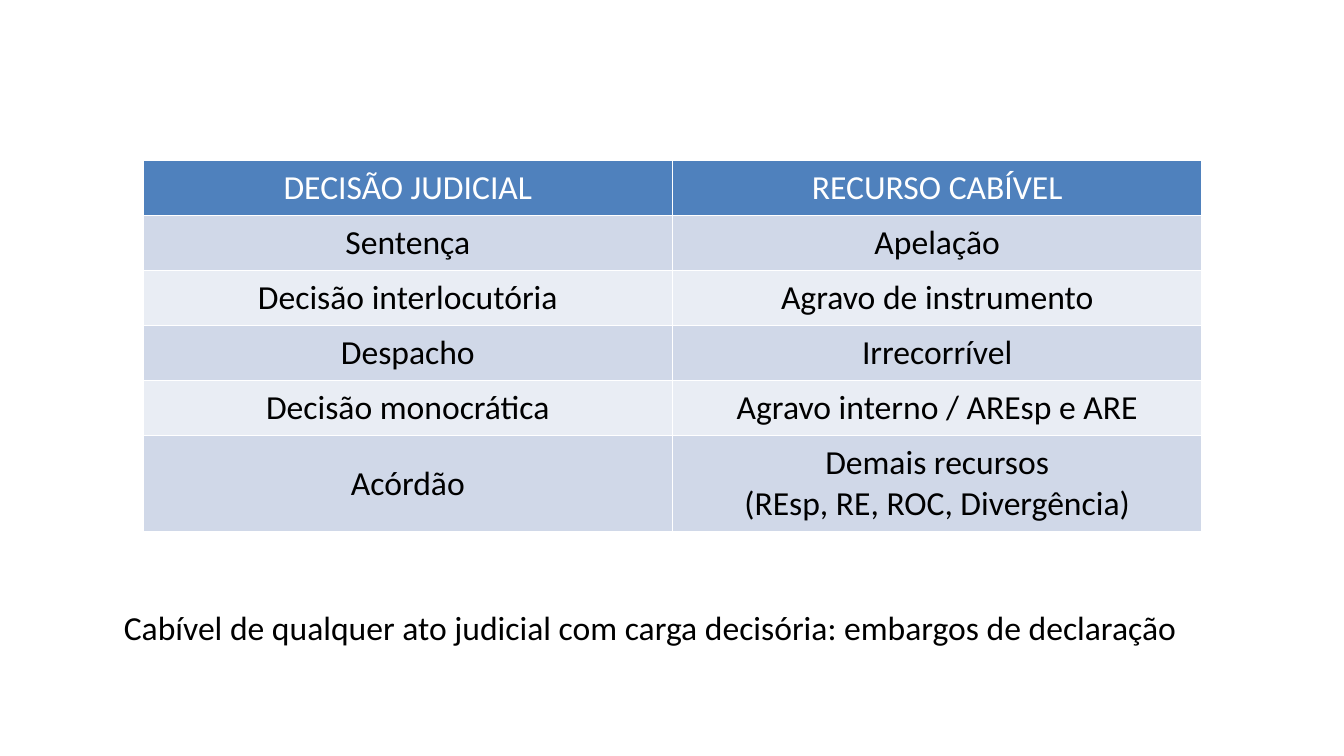
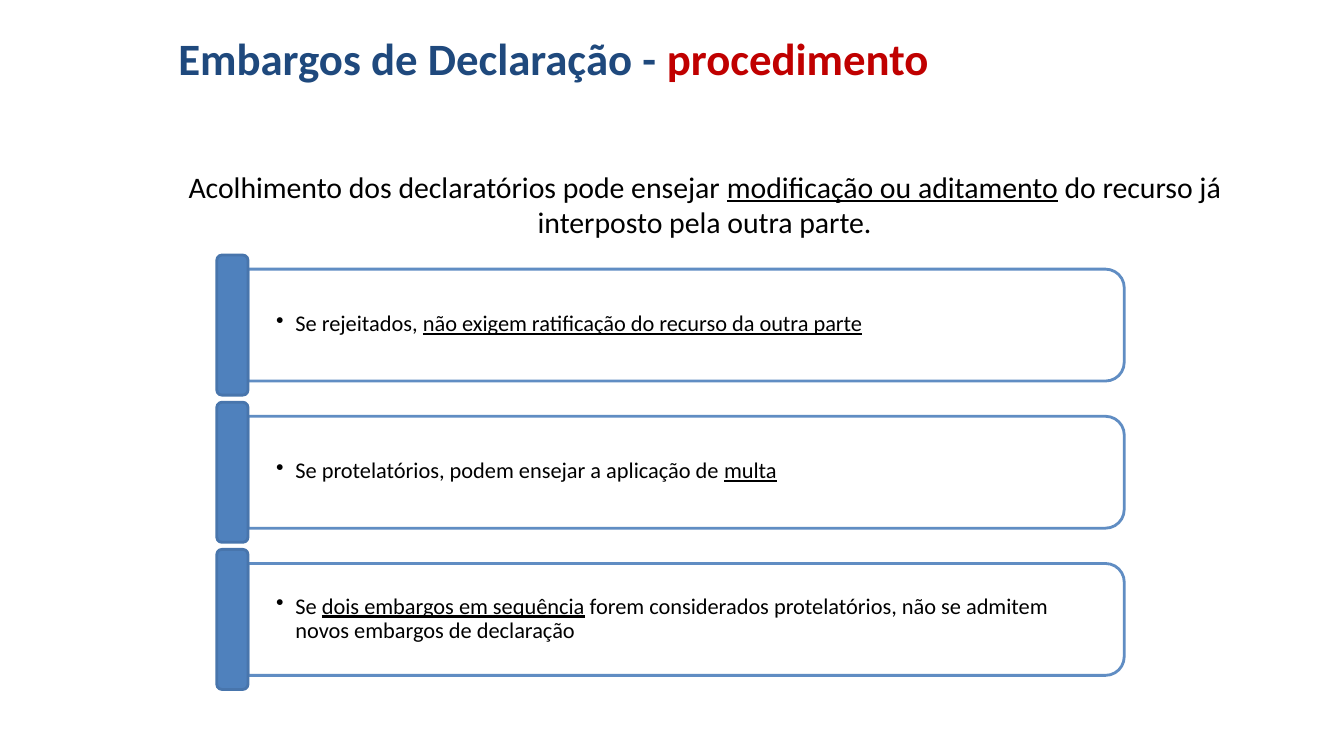
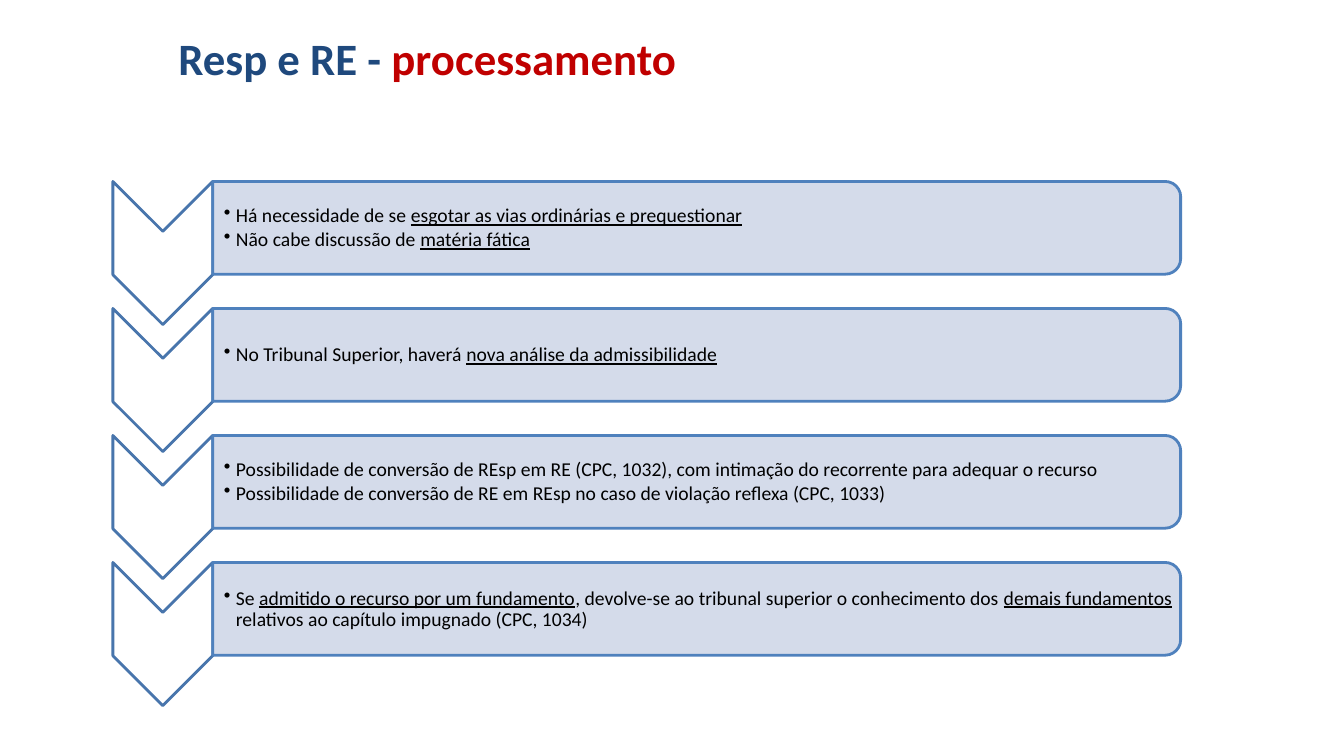
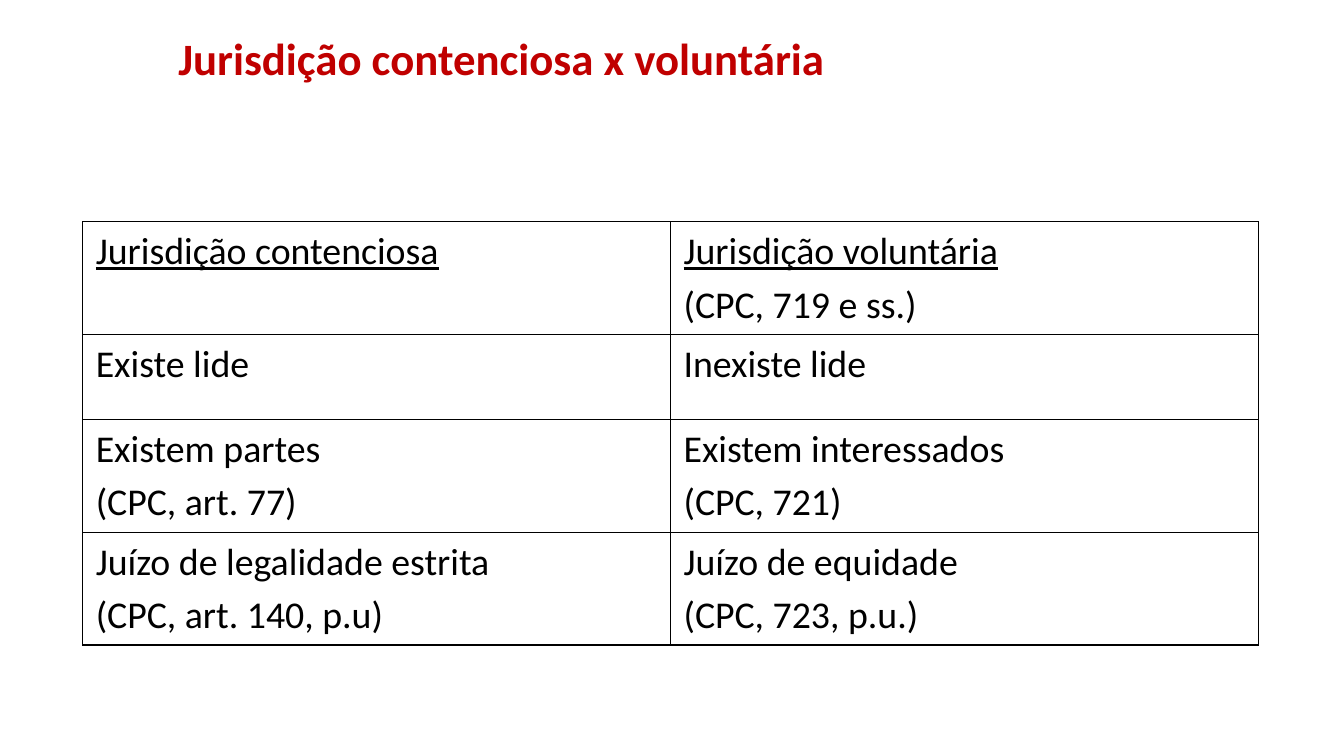
from dataclasses import dataclass, field
from typing import Any

from lxml.etree import SubElement
from pptx import Presentation
from pptx.dml.color import RGBColor
from pptx.enum.shapes import MSO_SHAPE
from pptx.enum.text import MSO_ANCHOR, PP_ALIGN
from pptx.oxml.ns import qn
from pptx.util import Inches, Pt


@dataclass(frozen=True)
class Theme:
    font: str = "Calibri"
    black: str = "000000"
    white: str = "FFFFFF"
    navy: str = "1F497D"
    red: str = "C00000"
    blue: str = "4F81BD"
    edge: str = "4875AC"
    pale: str = "D0D8E8"
    light: str = "E9EDF4"
    head: float = 32
    cell: float = 27
    body: float = 24
    lead: float = 21.3
    item: float = 16
    note: float = 14
    line: float = 2
    rule: float = 1


THEME = Theme()


@dataclass(frozen=True)
class Look:
    size: float
    ink: str = THEME.black
    mark: str = THEME.black
    base: dict[str, Any] = field(default_factory=dict)
    accent: dict[str, Any] = field(default_factory=lambda: {"underline": True})
    form: dict[str, Any] = field(default_factory=dict)
    gap: float = 0
    hang: float = 0


@dataclass(frozen=True)
class Box:
    x: float
    y: float
    w: float
    h: float

    def down(self, step: float) -> "Box":
        return Box(self.x, self.y + step, self.w, self.h)

    def turn(self) -> "Box":
        return Box(self.x + (self.w - self.h) / 2, self.y + (self.h - self.w) / 2, self.h, self.w)

    def place(self) -> list[int]:
        return [Inches(n) for n in (self.x, self.y, self.w, self.h)]


@dataclass(frozen=True)
class Grid:
    box: Box
    rows: list[float]
    fills: list[str | None]
    rule: str
    anchor: MSO_ANCHOR
    looks: list[Look]


MID = {"alignment": PP_ALIGN.CENTER}
LIST = {"line_spacing": 0.9, "space_after": Pt(2)}
TITLE = Look(THEME.head, THEME.navy, THEME.red, {"bold": True}, {"bold": True})
PLAIN = Look(THEME.body)
MIDDLE = Look(THEME.body, form=MID)
HEAD = Look(THEME.body, ink=THEME.white, form=MID)
LEAD = Look(THEME.lead, form=MID)
CELL = Look(THEME.cell, form={"alignment": PP_ALIGN.JUSTIFY}, gap=5.4)
ITEM = Look(THEME.item, form=LIST, hang=0.19)
NOTE = Look(THEME.note, form=LIST, hang=0.12)


def apply(thing: Any, values: dict[str, Any]) -> None:
    for name, value in values.items():
        setattr(thing, name, value)


def write(frame: Any, lines: list[str], look: Look) -> None:
    for i, line in enumerate(lines):
        para = frame.add_paragraph() if i else frame.paragraphs[0]
        if look.hang:
            props = para._p.get_or_add_pPr()
            props.set("marL", str(Inches(look.hang)))
            props.set("indent", str(-Inches(look.hang)))
            SubElement(props, qn("a:buChar"), char="•")
        apply(para, look.form)
        if i and look.gap:
            para.space_before = Pt(look.gap)
        for j, part in enumerate(line.split("_")):
            if not part:
                continue
            run = para.add_run()
            run.text = part
            extra = look.accent if j % 2 else look.base
            apply(run.font, {"name": THEME.font, "size": Pt(look.size), **extra})
            run.font.color.rgb = RGBColor.from_string(look.mark if j % 2 else look.ink)


def label(slide: Any, box: Box, lines: list[str], look: Look,
          anchor: MSO_ANCHOR = MSO_ANCHOR.MIDDLE,
          pads: tuple[float, float, float, float] = (0.1, 0.05, 0.1, 0.05)) -> None:
    frame = slide.shapes.add_textbox(*box.place()).text_frame
    sides = ("left", "top", "right", "bottom")
    apply(frame, {"word_wrap": True, "vertical_anchor": anchor,
                  **{f"margin_{s}": Inches(p) for s, p in zip(sides, pads)}})
    write(frame, lines, look)


def title(slide: Any, text: str) -> None:
    label(slide, Box(1.67, 0.23, 11, 0.68), [text], TITLE)


def draw(slide: Any, kind: MSO_SHAPE, box: Box, fill: str, line: str,
         turned: bool = False, fade: str = "") -> None:
    spot = box.turn() if turned else box
    shape = slide.shapes.add_shape(kind, *spot.place())
    shape.shadow.inherit = False
    shape.rotation = 90 if turned else 0
    shape.fill.solid()
    shape.fill.fore_color.rgb = RGBColor.from_string(fill)
    shape.line.color.rgb = RGBColor.from_string(line)
    shape.line.width = Pt(THEME.line)
    if fade:
        for tint in shape._element.spPr.xpath(fade):
            SubElement(tint, qn("a:alpha"), val="90000")


def border(cell: Any, tint: str) -> None:
    props = cell._tc.get_or_add_tcPr()
    for side in ("lnL", "lnR", "lnT", "lnB"):
        line = SubElement(props, qn(f"a:{side}"), w=str(Pt(THEME.rule)))
        SubElement(SubElement(line, qn("a:solidFill")), qn("a:srgbClr"), val=tint)


def table(slide: Any, grid: Grid, data: list[list[list[str]]]) -> None:
    cols = len(data[0])
    made = slide.shapes.add_table(len(data), cols, *grid.box.place()).table
    apply(made, {"first_row": False, "horz_banding": False})
    for col in made.columns:
        col.width = Inches(grid.box.w / cols)
    for r, row in enumerate(data):
        made.rows[r].height = Inches(grid.rows[r])
        for c, lines in enumerate(row):
            cell = made.cell(r, c)
            apply(cell, {"margin_left": Inches(0.13), "margin_right": Inches(0.13),
                         "margin_top": Inches(0.07), "margin_bottom": Inches(0.07),
                         "vertical_anchor": grid.anchor})
            border(cell, grid.rule)
            if grid.fills[r]:
                cell.fill.solid()
                cell.fill.fore_color.rgb = RGBColor.from_string(grid.fills[r])
            else:
                cell.fill.background()
            write(cell.text_frame, lines, grid.looks[r])


def appeals(slide: Any) -> None:
    rows = [0.54] * 5 + [0.93]
    fills = [THEME.blue] + [THEME.pale, THEME.light] * 2 + [THEME.pale]
    grid = Grid(Box(1.42, 1.59, 10.5, sum(rows)), rows, fills, THEME.white,
                MSO_ANCHOR.MIDDLE, [HEAD] + [MIDDLE] * 5)
    table(slide, grid, [
        [["DECISÃO JUDICIAL"], ["RECURSO CABÍVEL"]],
        [["Sentença"], ["Apelação"]],
        [["Decisão interlocutória"], ["Agravo de instrumento"]],
        [["Despacho"], ["Irrecorrível"]],
        [["Decisão monocrática"], ["Agravo interno / AREsp e ARE"]],
        [["Acórdão"], ["Demais recursos", "(REsp, RE, ROC, Divergência)"]],
    ])
    label(slide, Box(1.13, 5.97, 11.5, 0.52),
          ["Cabível de qualquer ato judicial com carga decisória: embargos de declaração"],
          PLAIN, MSO_ANCHOR.TOP)


def motions(slide: Any) -> None:
    title(slide, "Embargos de Declaração - _procedimento_")
    label(slide, Box(1.46, 1.62, 11.06, 0.85),
          ["Acolhimento dos declaratórios pode ensejar _modificação ou aditamento_"
           " do recurso já interposto pela outra parte."], LEAD, MSO_ANCHOR.TOP)
    items = [
        "Se rejeitados, _não exigem ratificação do recurso da outra parte_",
        "Se protelatórios, podem ensejar a aplicação de _multa_",
        "Se _dois embargos em sequência_ forem considerados protelatórios,"
        " não se admitem novos embargos de declaração",
    ]
    for i, item in enumerate(items):
        step = i * 1.46
        draw(slide, MSO_SHAPE.ROUND_2_SAME_RECTANGLE, Box(2.46, 2.67, 8.69, 1.11).down(step),
             THEME.white, THEME.blue, True, ".//a:srgbClr")
        label(slide, Box(2.47, 2.72, 8.63, 1).down(step), [item], ITEM,
              pads=(0.27, 0.14, 0.27, 0.14))
        draw(slide, MSO_SHAPE.ROUNDED_RECTANGLE, Box(2.15, 2.53, 0.31, 1.39).down(step),
             THEME.blue, THEME.edge)


def process(slide: Any) -> None:
    title(slide, "Resp e RE - _processamento_")
    steps = [
        ["Há necessidade de se _esgotar as vias ordinárias e prequestionar_",
         "Não cabe discussão de _matéria fática_"],
        ["No Tribunal Superior, haverá _nova análise da admissibilidade_"],
        ["Possibilidade de conversão de REsp em RE (CPC, 1032),"
         " com intimação do recorrente para adequar o recurso",
         "Possibilidade de conversão de RE em REsp no caso de violação reflexa (CPC, 1033)"],
        ["Se _admitido o recurso por um fundamento_, devolve-se ao tribunal superior"
         " o conhecimento dos _demais fundamentos_ relativos ao capítulo impugnado (CPC, 1034)"],
    ]
    for i, lines in enumerate(steps):
        step = i * 1.26
        draw(slide, MSO_SHAPE.CHEVRON, Box(1.12, 1.8, 0.99, 1.42).down(step),
             THEME.white, THEME.edge, True)
        draw(slide, MSO_SHAPE.ROUND_2_SAME_RECTANGLE, Box(2.11, 1.8, 9.6, 0.92).down(step),
             THEME.pale, THEME.blue, True, "a:solidFill/a:srgbClr")
        label(slide, Box(2.11, 1.85, 9.55, 0.83).down(step), lines, NOTE,
              pads=(0.11, 0.01, 0.01, 0.01))


def compare(slide: Any) -> None:
    title(slide, "_Jurisdição contenciosa x voluntária_")
    rows = [1.12, 0.84, 1.12, 1.12]
    grid = Grid(Box(0.82, 2.2, 11.66, sum(rows)), rows, [None] * 4, THEME.black,
                MSO_ANCHOR.TOP, [CELL] * 4)
    table(slide, grid, [
        [["_Jurisdição contenciosa_"], ["_Jurisdição voluntária_", "(CPC, 719 e ss.)"]],
        [["Existe lide"], ["Inexiste lide"]],
        [["Existem partes", "(CPC, art. 77)"], ["Existem interessados", "(CPC, 721)"]],
        [["Juízo de legalidade estrita", "(CPC, art. 140, p.u)"],
         ["Juízo de equidade", "(CPC, 723, p.u.)"]],
    ])


def main() -> None:
    deck = Presentation()
    apply(deck, {"slide_width": Inches(13.33), "slide_height": Inches(7.5)})
    for build in (appeals, motions, process, compare):
        build(deck.slides.add_slide(deck.slide_layouts[6]))
    deck.save("out.pptx")


if __name__ == "__main__":
    main()
